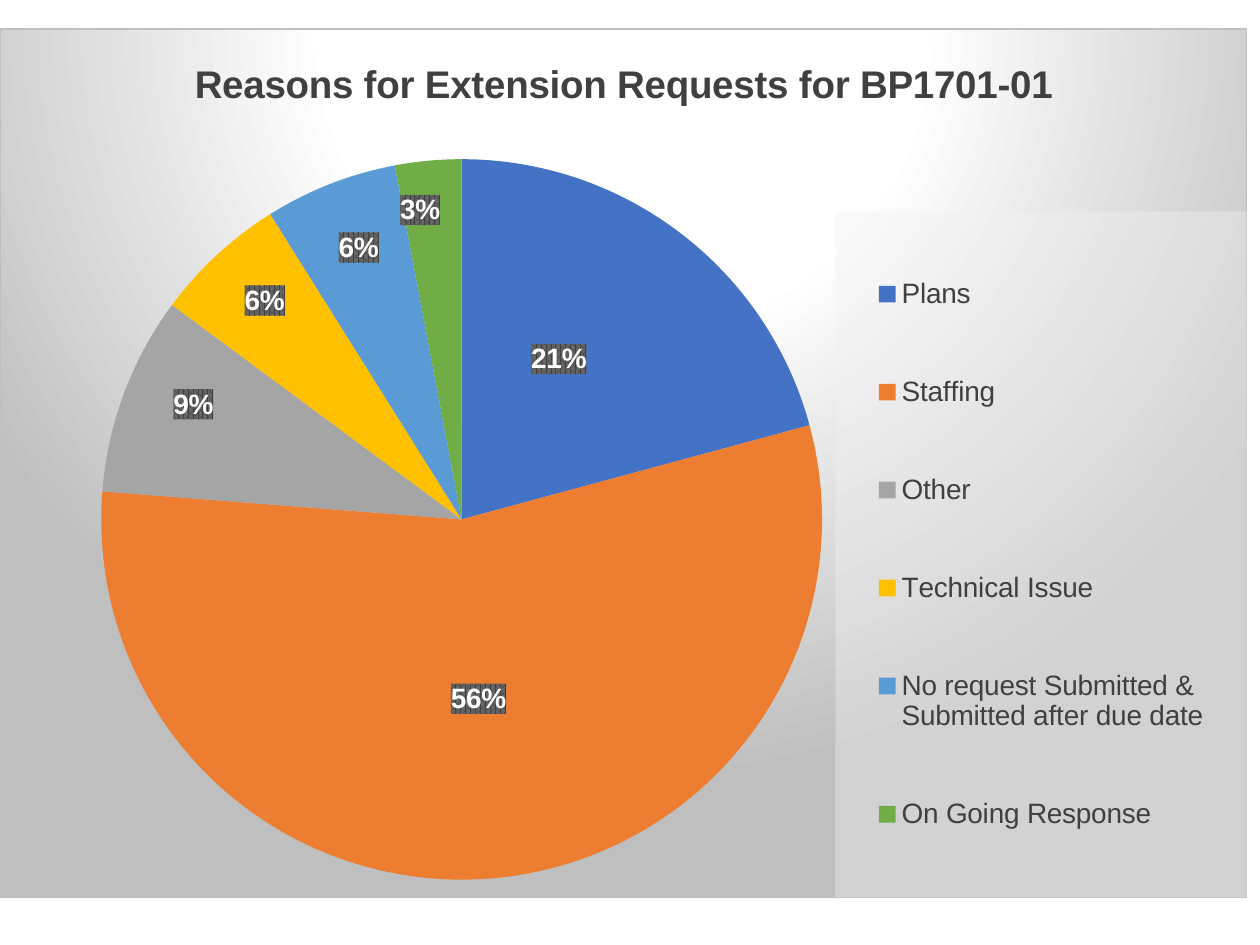
import copy

import lxml.etree
import pptx
import pptx.chart.data
import pptx.dml.color
import pptx.enum.chart
import pptx.oxml
import pptx.oxml.ns
import pptx.util

RGB = pptx.dml.color.RGBColor
BLACK, WHITE = RGB(0, 0, 0), RGB(0xFF, 0xFF, 0xFF)
DARK, SILVER, PALE = RGB(0x40, 0x40, 0x40), RGB(0xBF, 0xBF, 0xBF), RGB(0xF2, 0xF2, 0xF2)
BLUE, ORANGE, GRAY = RGB(0x44, 0x72, 0xC4), RGB(0xED, 0x7D, 0x31), RGB(0xA5, 0xA5, 0xA5)
GOLD, SKY, GREEN = RGB(0xFF, 0xC0, 0x00), RGB(0x5B, 0x9B, 0xD5), RGB(0x70, 0xAD, 0x47)

# Reason, percent, colour, label shift from the middle of the slice
REASONS = [
    ("Plans", 21, BLUE, (-0.01, -0.02)),
    ("Staffing", 56, ORANGE, None),
    ("Other", 9, GRAY, (-0.08, -0.06)),
    ("Technical Issue", 6, GOLD, (-0.06, -0.10)),
    ("No request Submitted & Submitted after due date", 6, SKY, (-0.03, -0.12)),
    ("On Going Response", 3, GREEN, (-0.02, -0.15)),
]

BACKDROP = f"""<a:gradFill><a:gsLst>
<a:gs pos="0"><a:srgbClr val="{WHITE}"/></a:gs>
<a:gs pos="39000"><a:srgbClr val="{WHITE}"/></a:gs>
<a:gs pos="100000"><a:srgbClr val="{SILVER}"/></a:gs></a:gsLst>
<a:path path="circle"><a:fillToRect l="50000" t="-80000" r="50000" b="180000"/></a:path>
</a:gradFill><a:ln w="9525"><a:solidFill><a:srgbClr val="{SILVER}"/></a:solidFill></a:ln>"""
LEGEND_FILL = (f'<a:solidFill><a:srgbClr val="{PALE}"><a:alpha val="39000"/>'
               '</a:srgbClr></a:solidFill>')
LABEL_FILL = f"""<a:pattFill prst="pct75">
<a:fgClr><a:srgbClr val="{DARK}"/></a:fgClr>
<a:bgClr><a:srgbClr val="666666"/></a:bgClr></a:pattFill><a:ln><a:noFill/></a:ln>"""


def chart_xml(tag, inner):
    ns = pptx.oxml.ns.nsdecls("c", "a")
    return pptx.oxml.parse_xml(f"<c:{tag} {ns}>{inner}</c:{tag}>")


def manual_layout(x, y, w=None, h=None, inner=False):
    parts = ['<c:layoutTarget val="inner"/>'] if inner else []
    if w is not None:
        parts += ['<c:xMode val="edge"/>', '<c:yMode val="edge"/>']
    sizes = (("x", x), ("y", y), ("w", w), ("h", h))
    parts += [f'<c:{k} val="{v}"/>' for k, v in sizes if v is not None]
    return chart_xml("layout", f"<c:manualLayout>{''.join(parts)}</c:manualLayout>")


class Deck:
    face = "Arial"

    def __init__(self, width, height):
        self.prs = pptx.Presentation()
        self.prs.slide_width = pptx.util.Inches(width)
        self.prs.slide_height = pptx.util.Inches(height)
        self.s = self.prs.slides.add_slide(self.prs.slide_layouts[6])

    def style(self, font, size, color, bold=False, face=None):
        font.name, font.size, font.bold = face or self.face, pptx.util.Pt(size), bold
        font.color.rgb = color

    def pie(self, x, y, w, h, reasons):
        """Add a pie chart; lengths are shares of the slide."""
        data = pptx.chart.data.CategoryChartData()
        data.categories = [name for name, *_ in reasons]
        data.add_series("Series 1", [value for _, value, *_ in reasons])
        sw, sh = self.prs.slide_width, self.prs.slide_height
        chart = self.s.shapes.add_chart(
            pptx.enum.chart.XL_CHART_TYPE.PIE,
            int(x * sw), int(y * sh), int(w * sw), int(h * sh), data).chart
        self.style(chart.font, 10, BLACK, face="Calibri")
        chart._chartSpace.chart.addnext(chart_xml("spPr", BACKDROP))
        chart.plots[0].vary_by_categories = True

        # Plot area
        area = chart._chartSpace.chart.plotArea
        for old in area.findall(pptx.oxml.ns.qn("c:layout")):
            area.remove(old)
        area.insert(0, manual_layout(0.08, 0.15, 0.58, 0.83, inner=True))

        self.labels(chart.plots[0].series[0], reasons)
        return chart

    def title(self, chart, text):
        chart.has_title = True
        p = chart.chart_title.text_frame.paragraphs[0]
        p.text = text
        self.style(p.font, 22, DARK, bold=True)
        chart.chart_title.include_in_layout = False

    def legend(self, chart, x, y, w, h):
        chart.has_legend = True
        legend = chart.legend
        legend.position = pptx.enum.chart.XL_LEGEND_POSITION.RIGHT
        legend.include_in_layout = False
        self.style(legend.font, 16, DARK)
        overlay = legend._element.find(pptx.oxml.ns.qn("c:overlay"))
        for old in legend._element.findall(pptx.oxml.ns.qn("c:layout")):
            legend._element.remove(old)
        overlay.addprevious(manual_layout(x, y, w, h))
        overlay.addnext(chart_xml("spPr", LEGEND_FILL))

    def labels(self, series, reasons):
        center = pptx.enum.chart.XL_LABEL_POSITION.CENTER
        labels = series.data_labels
        labels.show_value = True
        labels.number_format, labels.number_format_is_linked = '0"%"', False
        labels.position = center
        self.style(labels.font, 16, WHITE, bold=True)
        qn = pptx.oxml.ns.qn
        root = labels._element
        root.find(qn("c:numFmt")).addnext(chart_xml("spPr", LABEL_FILL))
        shared = [root.find(qn(f"c:{tag}")) for tag in ("numFmt", "spPr", "txPr")]

        for i, (_, _, color, shift) in enumerate(reasons):
            point = series.points[i]
            point.format.fill.solid()
            point.format.fill.fore_color.rgb = color
            if shift is None:
                continue
            # A moved label repeats the shared style
            point.data_label.position = center
            label = root.findall(qn("c:dLbl"))[-1]
            for old in label.findall(qn("c:spPr")) + label.findall(qn("c:txPr")):
                label.remove(old)
            parts = [manual_layout(*shift)] + [copy.deepcopy(e) for e in shared]
            for part in reversed(parts):
                label.find(qn("c:idx")).addnext(part)


def main():
    deck = Deck(10, 7.5)
    chart = deck.pie(0, 0.03, 0.99, 0.92, REASONS)
    deck.title(chart, "Reasons for Extension Requests for BP1701-01")
    deck.legend(chart, 0.67, 0.21, 0.33, 0.79)
    deck.prs.save("out.pptx")


if __name__ == "__main__":
    main()
